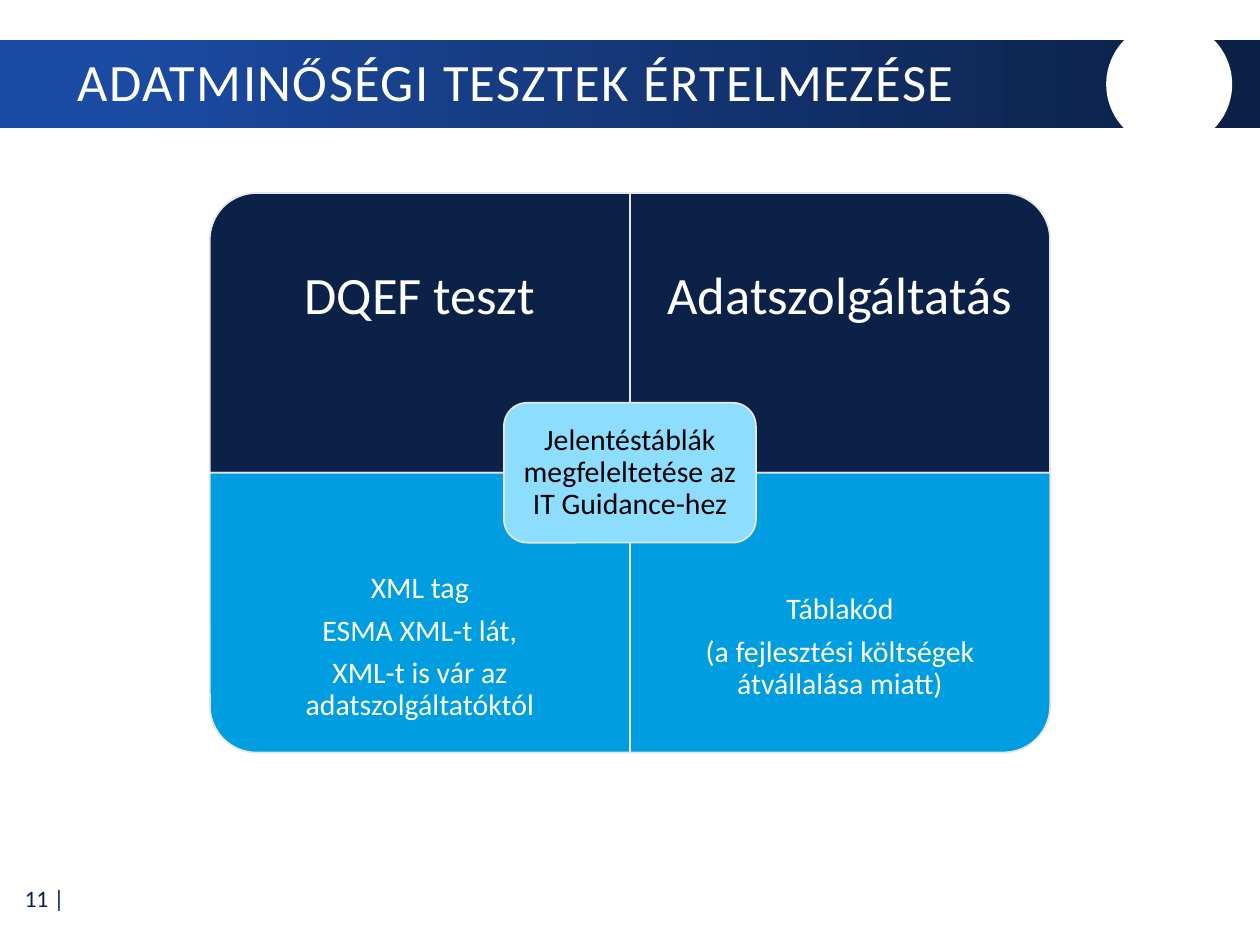
from dataclasses import dataclass

from pptx import Presentation
from pptx.dml.color import RGBColor
from pptx.enum.shapes import MSO_SHAPE
from pptx.enum.text import MSO_ANCHOR, PP_ALIGN
from pptx.util import Cm, Pt

RECTANGLE = MSO_SHAPE.RECTANGLE
ELLIPSE = MSO_SHAPE.OVAL
ONE_ROUND = MSO_SHAPE.ROUND_1_RECTANGLE
ALL_ROUND = MSO_SHAPE.ROUNDED_RECTANGLE
MIDDLE = MSO_ANCHOR.MIDDLE
LEFT, CENTER, RIGHT = PP_ALIGN.LEFT, PP_ALIGN.CENTER, PP_ALIGN.RIGHT

FONT = "Calibri"
NAVY, BLUE, SKY, PALE = "0C2148", "1B4BA3", "009EE0", "8DDDFF"
WHITE, BLACK, BORDER = "FFFFFF", "000000", "E7E6E6"


@dataclass
class Area:
    """A rectangle in centimetres."""
    left: float
    top: float
    width: float
    height: float

    def lengths(self) -> tuple:
        return Cm(self.left), Cm(self.top), Cm(self.width), Cm(self.height)


@dataclass
class Quadrant:
    column: int
    row: int
    rotation: int
    text: str
    size: float
    inset: float


# Matrix measures in centimetres
MATRIX_LEFT, MATRIX_TOP = 4.23, 3.89
CELL_WIDTH, CELL_HEIGHT = 8.47, 5.64
LABEL_HEIGHT = CELL_HEIGHT * 0.75

QUADRANTS = [
    Quadrant(0, 0, 270, "DQEF teszt", 30, 0.59),
    Quadrant(1, 0, 0, "Adatszolgáltatás", 30, 0.59),
    Quadrant(0, 1, 180,
             "XML tag\nESMA XML-t lát,\nXML-t is vár az adatszolgáltatóktól",
             17, 0.34),
    Quadrant(1, 1, 90,
             "Táblakód\n(a fejlesztési költségek átvállalása miatt)",
             17, 0.34),
]


def color(value: str) -> RGBColor:
    return RGBColor.from_string(value)


def add_block(page, kind, area: Area, fill: str, border: str = ""):
    block = page.shapes.add_shape(kind, *area.lengths())
    block.shadow.inherit = False
    block.fill.solid()
    block.fill.fore_color.rgb = color(fill)
    if border:
        block.line.color.rgb = color(border)
        block.line.width = Pt(1)
    else:
        block.line.fill.background()
    return block


def add_text(page, area: Area, text: str, size: float, ink: str,
             align=CENTER, insets: tuple = (0.25, 0.13),
             line_spacing: float = 0.9, after: float = 0,
             tracking: float = 0) -> None:
    box = page.shapes.add_textbox(*area.lengths())
    frame = box.text_frame
    frame.word_wrap = True
    frame.vertical_anchor = MIDDLE
    frame.margin_left = frame.margin_right = Cm(insets[0])
    frame.margin_top = frame.margin_bottom = Cm(insets[1])
    frame.text = text
    for paragraph in frame.paragraphs:
        paragraph.alignment = align
        paragraph.line_spacing = line_spacing
        paragraph.space_after = Pt(after)
        for span in paragraph.runs:
            span.font.name = FONT
            span.font.size = Pt(size)
            span.font.color.rgb = color(ink)
            if tracking:
                span._r.get_or_add_rPr().set("spc", str(int(tracking * 100)))


def add_header(page) -> None:
    band = add_block(page, RECTANGLE, Area(0, 0.81, 25.4, 1.78), NAVY)
    band.fill.gradient()
    band.fill.gradient_angle = 0
    for stop, (position, value) in zip(band.fill.gradient_stops,
                                       [(0.09, BLUE), (0.95, NAVY)]):
        stop.position = position
        stop.color.rgb = color(value)
    add_block(page, ELLIPSE, Area(22.3, 0.43, 2.54, 2.54), WHITE)
    add_text(page, Area(1.32, 0.86, 21.13, 1.7),
             "ADATMINŐSÉGI TESZTEK ÉRTELMEZÉSE", 30, WHITE,
             align=LEFT, tracking=0.8)


def add_quadrant(page, quadrant: Quadrant) -> None:
    left = MATRIX_LEFT + quadrant.column * CELL_WIDTH
    top = MATRIX_TOP + quadrant.row * CELL_HEIGHT
    # A quarter turn swaps the sides around the same centre
    turned = quadrant.rotation % 180 == 90
    shift = (CELL_WIDTH - CELL_HEIGHT) / 2
    area = (Area(left + shift, top - shift, CELL_HEIGHT, CELL_WIDTH) if turned
            else Area(left, top, CELL_WIDTH, CELL_HEIGHT))
    block = add_block(page, ONE_ROUND, area, SKY if quadrant.row else NAVY, BORDER)
    block.rotation = quadrant.rotation

    # Labels keep to the outer three quarters of the cell
    label_top = top + quadrant.row * (CELL_HEIGHT - LABEL_HEIGHT)
    add_text(page, Area(left, label_top, CELL_WIDTH, LABEL_HEIGHT),
             quadrant.text, quadrant.size, WHITE,
             insets=(quadrant.inset, quadrant.inset),
             after=quadrant.size * 0.35)


def add_center(page) -> None:
    width, height, padding = 5.08, 2.82, 0.14
    left = MATRIX_LEFT + CELL_WIDTH - width / 2
    top = MATRIX_TOP + CELL_HEIGHT - height / 2
    add_block(page, ALL_ROUND, Area(left, top, width, height), PALE, BORDER)
    add_text(page, Area(left + padding, top + padding,
                        width - 2 * padding, height - 2 * padding),
             "Jelentéstáblák megfeleltetése az IT Guidance-hez", 17, BLACK,
             insets=(0.18, 0.18), after=17 * 0.35)


def main() -> None:
    deck = Presentation()
    deck.slide_width, deck.slide_height = Cm(25.4), Cm(19.05)
    page = deck.slides.add_slide(deck.slide_layouts[6])

    # Page number and title band
    add_text(page, Area(0.03, 17.63, 1.52, 0.94), "11 |", 13.5, NAVY,
             align=RIGHT, line_spacing=1)
    add_header(page)

    # Matrix with its centre label
    for quadrant in QUADRANTS:
        add_quadrant(page, quadrant)
    add_center(page)

    deck.save("out.pptx")


if __name__ == "__main__":
    main()
